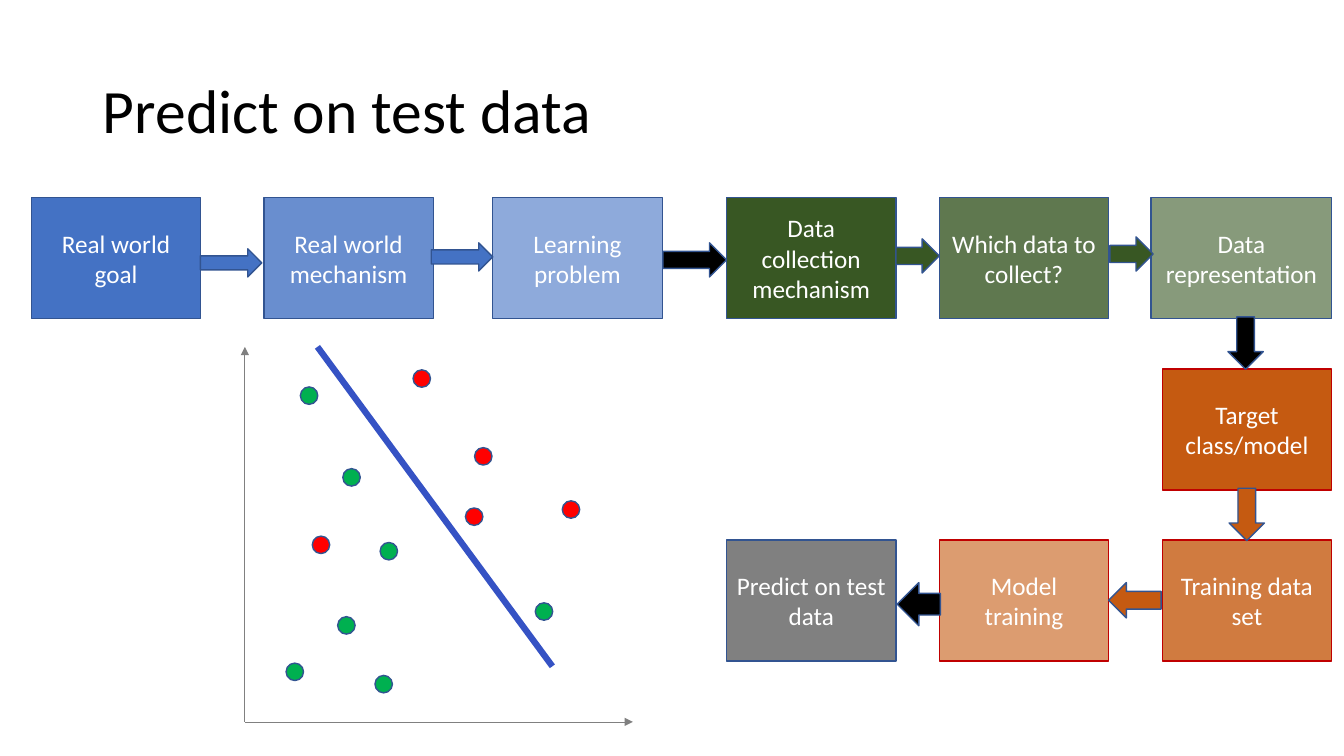
from pptx import Presentation
from pptx.dml.color import RGBColor
from pptx.enum.shapes import MSO_CONNECTOR, MSO_SHAPE
from pptx.enum.text import MSO_ANCHOR, PP_ALIGN
from pptx.oxml.ns import qn
from pptx.util import Cm, Pt
from lxml import etree

RECT = MSO_SHAPE.RECTANGLE
ARROW = MSO_SHAPE.RIGHT_ARROW
OVAL = MSO_SHAPE.OVAL
STRAIGHT = MSO_CONNECTOR.STRAIGHT
MIDDLE = MSO_ANCHOR.MIDDLE
LEFT = PP_ALIGN.LEFT
CENTER = PP_ALIGN.CENTER

BLUE = RGBColor(0x44, 0x72, 0xC4)
EDGE = RGBColor(0x32, 0x54, 0x91)
FOREST = RGBColor(0x38, 0x57, 0x23)
RUST = RGBColor(0xC5, 0x5A, 0x11)
CRIMSON = RGBColor(0xC0, 0x00, 0x00)
GRAY = RGBColor(0x80, 0x80, 0x80)
BLACK = RGBColor(0x00, 0x00, 0x00)
WHITE = RGBColor(0xFF, 0xFF, 0xFF)
GREEN = RGBColor(0x00, 0xB0, 0x50)
RED = RGBColor(0xFF, 0x00, 0x00)
INDIGO = RGBColor(0x35, 0x52, 0xC4)

deck = Presentation()
deck.slide_width = Cm(33.87)
deck.slide_height = Cm(19.05)
slide = deck.slides.add_slide(deck.slide_layouts[5])


def add_part(kind, left, top, width, height, fill, edge=EDGE):
    part = slide.shapes.add_shape(kind, Cm(left), Cm(top), Cm(width), Cm(height))
    part.shadow.inherit = False
    part.fill.solid()
    part.fill.fore_color.rgb = fill
    part.line.color.rgb = edge
    part.line.width = Pt(1)
    return part


def add_line(x1, y1, x2, y2, color, width):
    line = slide.shapes.add_connector(STRAIGHT, Cm(x1), Cm(y1), Cm(x2), Cm(y2))
    line.line.color.rgb = color
    line.line.width = Pt(width)
    etree.SubElement(line._element.spPr, qn("a:effectLst"))
    return line


title = slide.shapes.title
title.left, title.top = Cm(2.34), Cm(1.02)
title.width, title.height = Cm(29.21), Cm(3.68)
title.text_frame.text = "Predict on test data"
title.text_frame.vertical_anchor = MIDDLE
head = title.text_frame.paragraphs[0]
head.alignment = LEFT
head.line_spacing = 0.9
head.font.name = "Calibri"
head.font.size = Pt(44)
head.font.color.rgb = BLACK

ROW1, ROW2, ROW3 = 4.98, 9.3, 13.61
WIDTH, HEIGHT = 4.27, 3.05
steps = [
    ("Real world goal", 0.79, ROW1, WIDTH, BLUE, 100, EDGE),
    ("Real world mechanism", 6.65, ROW1, WIDTH, BLUE, 80, EDGE),
    ("Learning problem", 12.42, ROW1, WIDTH, BLUE, 60, EDGE),
    ("Data collection mechanism", 18.31, ROW1, WIDTH, FOREST, 100, EDGE),
    ("Which data to collect?", 23.67, ROW1, WIDTH, FOREST, 80, EDGE),
    ("Data representation", 29.01, ROW1, 4.55, FOREST, 60, EDGE),
    ("Target class/model", 29.29, ROW2, WIDTH, RUST, 100, CRIMSON),
    ("Training data set", 29.29, ROW3, WIDTH, RUST, 80, CRIMSON),
    ("Model training", 23.67, ROW3, WIDTH, RUST, 60, CRIMSON),
    ("Predict on test data", 18.31, ROW3, WIDTH, GRAY, 100, EDGE),
]
for label, left, top, width, fill, alpha, edge in steps:
    box = add_part(RECT, left, top, width, HEIGHT, fill, edge)
    if alpha < 100:
        tint = box.fill._xPr.find(qn("a:solidFill"))[0]
        etree.SubElement(tint, qn("a:alpha"), val=str(alpha * 1000))
    frame = box.text_frame
    frame.word_wrap = True
    frame.vertical_anchor = MIDDLE
    frame.text = label
    para = frame.paragraphs[0]
    para.alignment = CENTER
    para.font.name = "Calibri"
    para.font.size = Pt(18)
    para.font.color.rgb = WHITE

arrows = [
    (5.05, 6.27, 1.55, 0.71, BLUE, 0),
    (10.87, 6.12, 1.55, 0.71, BLUE, 0),
    (16.71, 6.12, 1.6, 0.86, BLACK, 0),
    (22.58, 6.02, 1.09, 0.86, FOREST, 0),
    (27.97, 5.97, 1.09, 0.86, FOREST, 0),
    (30.73, 8.2, 1.32, 0.89, BLACK, 90),
    (30.76, 12.52, 1.32, 0.89, RUST, 90),
    (27.94, 14.68, 1.32, 0.89, RUST, 180),
    (22.61, 14.68, 1.09, 1.09, BLACK, 180),
]
for left, top, width, height, fill, turn in arrows:
    arrow = add_part(ARROW, left, top, width, height, fill)
    arrow.rotation = turn

for x, y in [(6.17, 8.74), (15.95, 18.19)]:
    axis = add_line(6.17, 18.19, x, y, GRAY, 0.5)
    etree.SubElement(axis.line._get_or_add_ln(), qn("a:tailEnd"), type="triangle")

DOT = 0.44
dots = {
    GREEN: [(7.57, 9.75), (8.64, 11.81), (9.58, 13.67), (8.51, 15.54),
            (7.21, 16.71), (13.49, 15.19), (9.45, 17.02)],
    RED: [(11.96, 11.28), (11.73, 12.8), (10.41, 9.32), (7.87, 13.51),
          (14.17, 12.62)],
}
for color, spots in dots.items():
    for left, top in spots:
        add_part(OVAL, left, top, DOT, DOT, color)

add_line(8, 8.74, 13.92, 16.79, INDIGO, 4.5)

deck.save("out.pptx")
